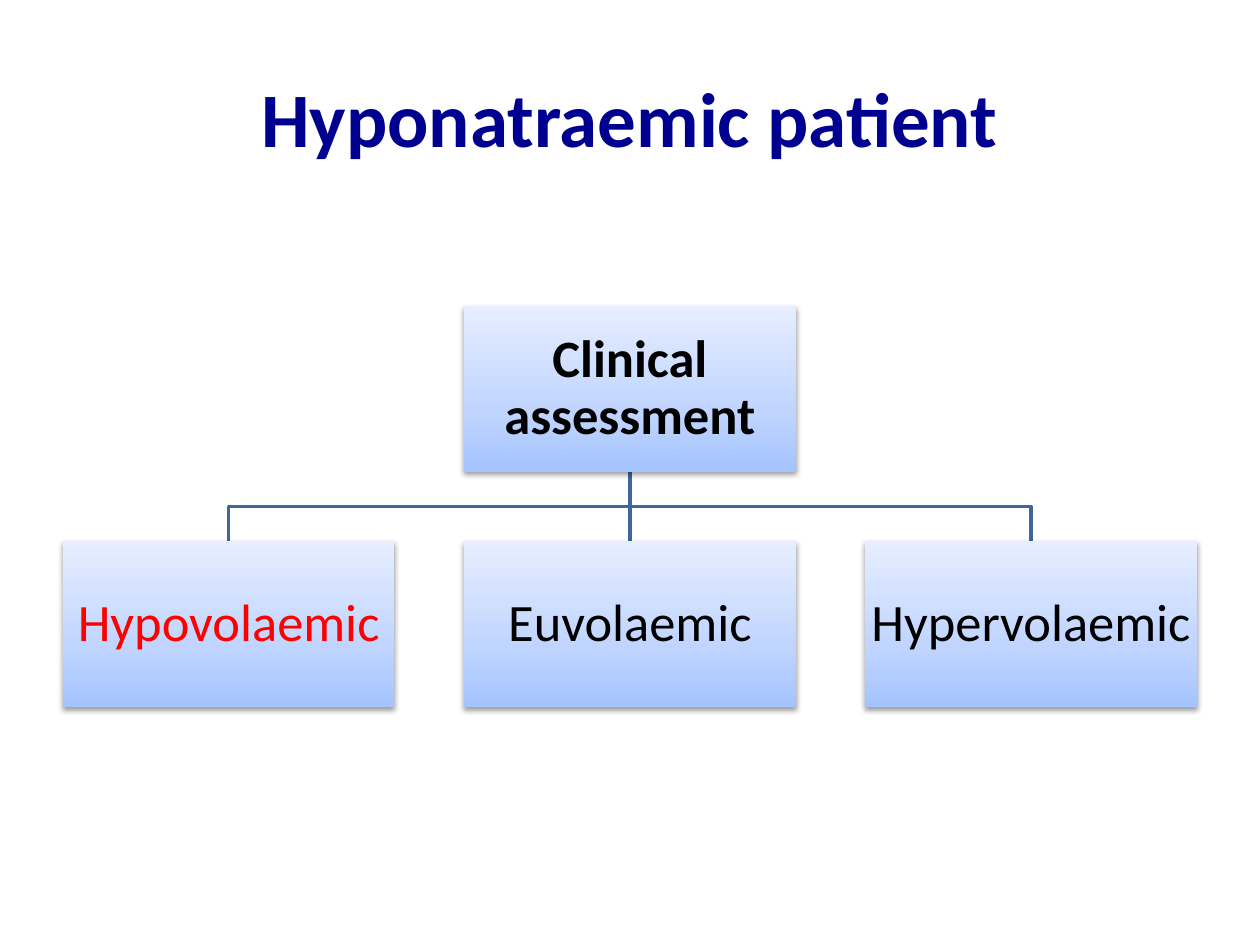
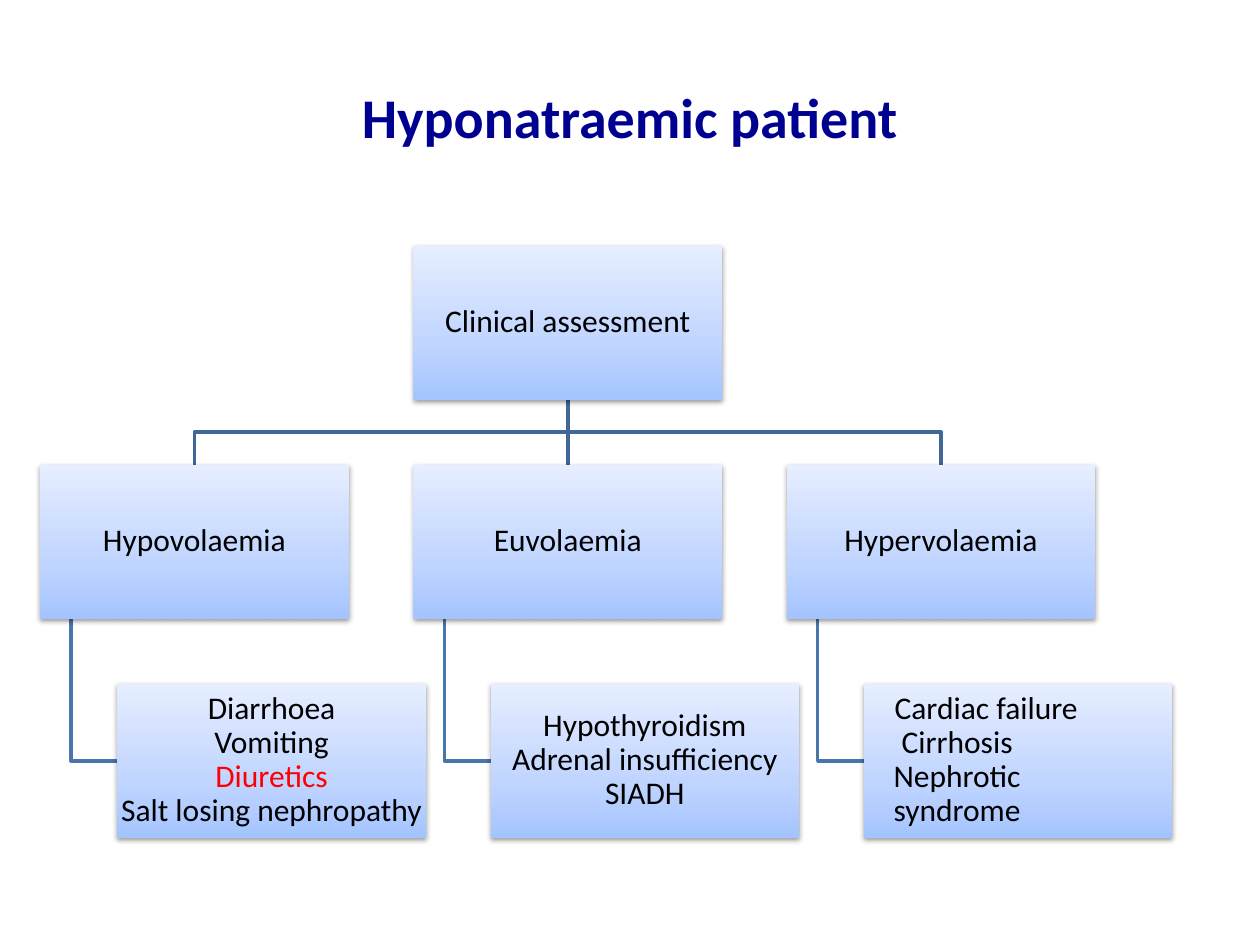
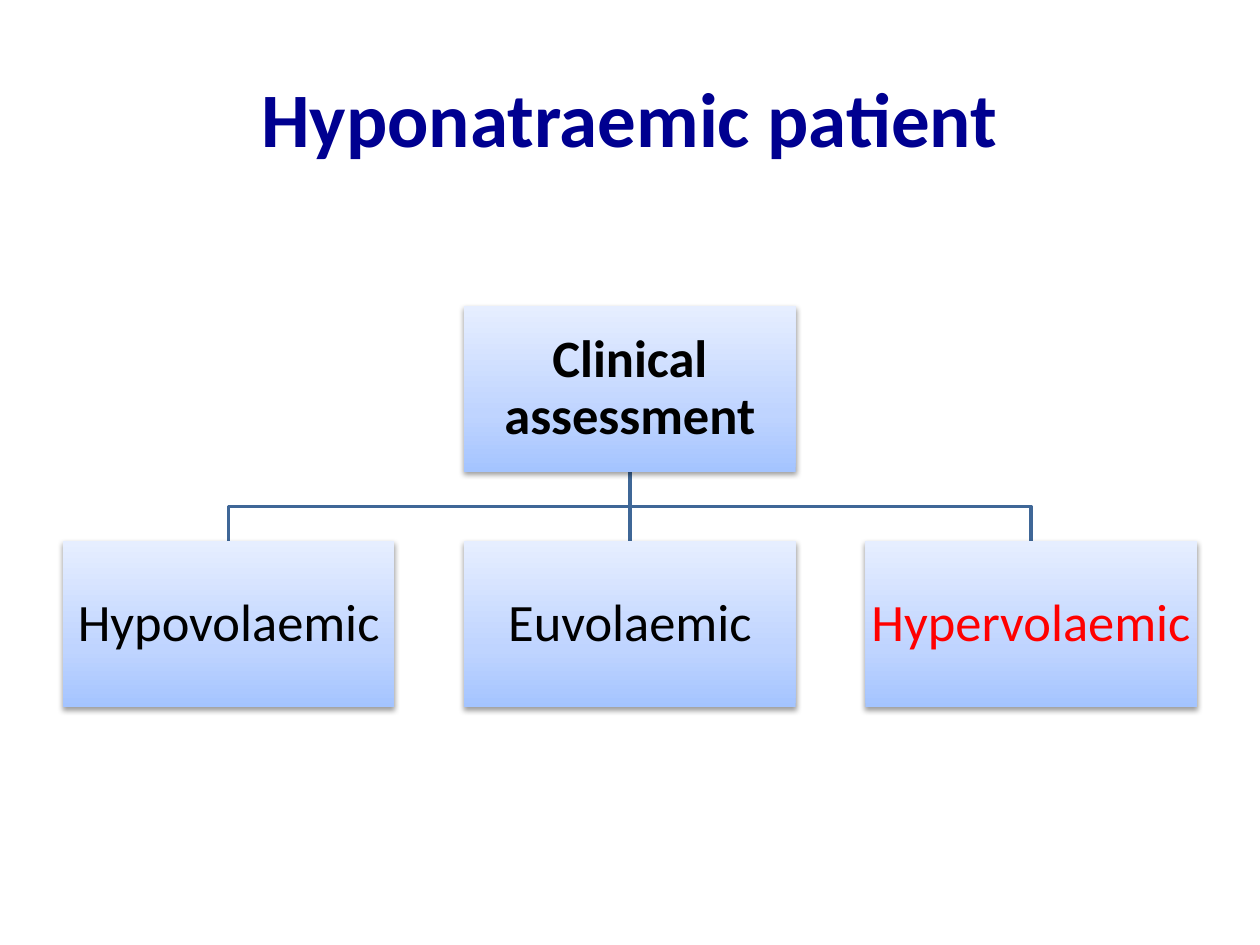
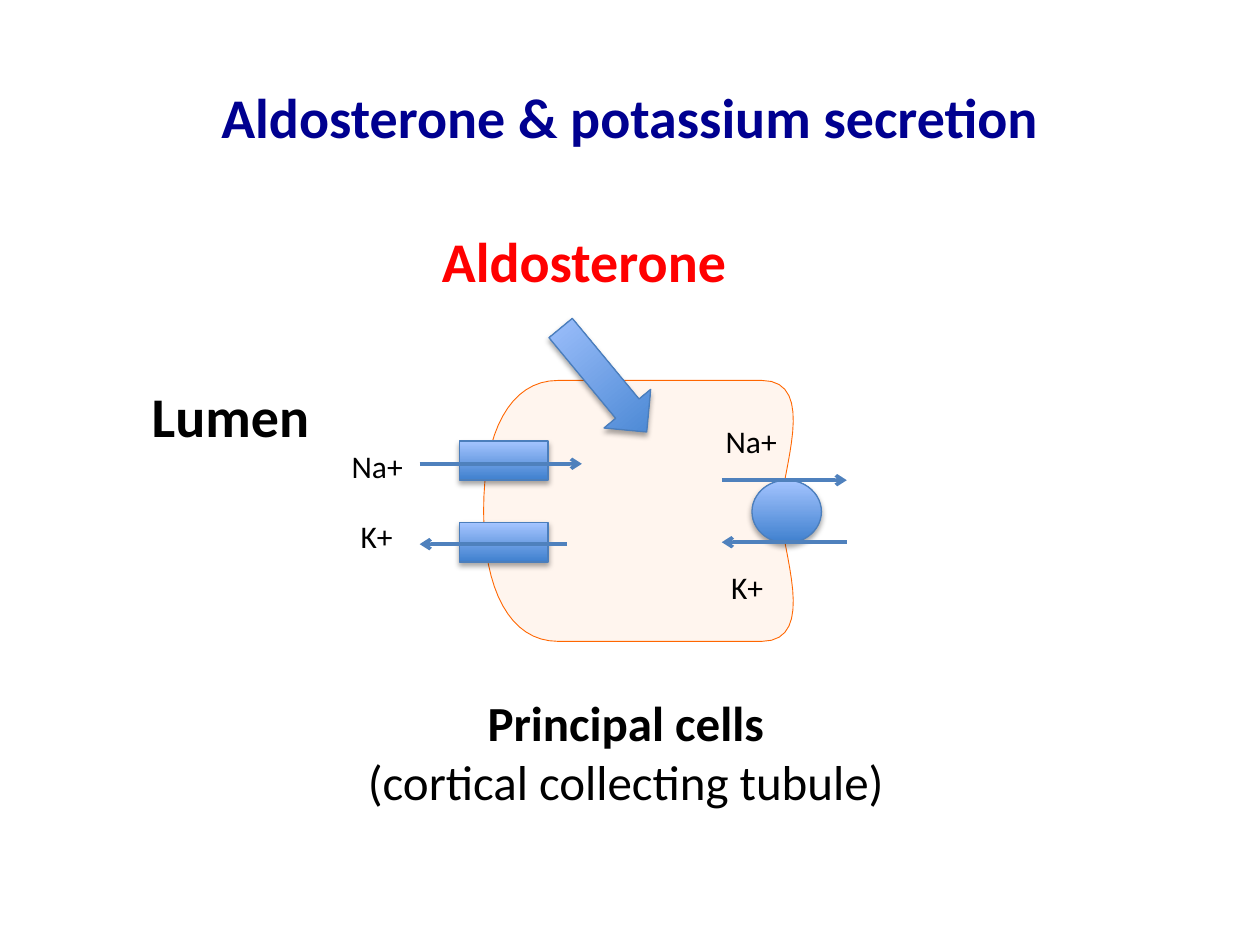
from lxml import etree
from pptx import Presentation
from pptx.dml.color import RGBColor
from pptx.enum.shapes import MSO_CONNECTOR, MSO_SHAPE
from pptx.enum.text import MSO_ANCHOR, PP_ALIGN
from pptx.oxml.ns import qn
from pptx.util import Cm, Pt

RECT, OVAL, DOWN = MSO_SHAPE.RECTANGLE, MSO_SHAPE.OVAL, MSO_SHAPE.DOWN_ARROW
STRAIGHT = MSO_CONNECTOR.STRAIGHT
MIDDLE, TOP = MSO_ANCHOR.MIDDLE, MSO_ANCHOR.TOP
LEFT, CENTER = PP_ALIGN.LEFT, PP_ALIGN.CENTER

FONT = "Calibri"
HEX = {
    "title": "000090", "text": "000000", "alert": "FF0000",
    "link": "3F6797", "stem": "4875AC", "edge": "4B7EBC", "flow": "4F81BD",
    "cell": "FFF5EE", "rim": "FF6600", "shade": "000000",
}
PALE = [(0, "A4C4FF"), (35, "BFD4FF"), (100, "E6EEFF")]
DEEP = [(0, "3F80CE"), (100, "A4C4FF")]


def rgb(name):
    return RGBColor.from_string(HEX[name])


def add(parent, tag, **attrs):
    node = etree.SubElement(parent, qn(tag))
    for key, value in attrs.items():
        node.set(key, str(value))
    return node


# Text
def write(frame, lines, size, bold=False, align=CENTER, anchor=MIDDLE,
          wrap=True, space=None):
    """Each line is a text, or a text with a dict of its own settings."""
    frame.word_wrap = wrap
    frame.vertical_anchor = anchor
    for i, line in enumerate(lines):
        words, own = (line, {}) if isinstance(line, str) else line
        para = frame.paragraphs[0] if i == 0 else frame.add_paragraph()
        para.text = words
        para.alignment = align
        para.line_spacing = space
        if "before" in own:
            para.space_before = Pt(own["before"])
        for side in ("marL", "marR"):
            if side in own:
                para._p.get_or_add_pPr().set(side, str(Cm(own[side])))
        font = para.font
        font.name, font.size = FONT, Pt(size)
        font.bold = own.get("bold", bold)
        font.color.rgb = rgb(own.get("color", "text"))


def label(slide, box, lines, size, pad=None, **style):
    frame = slide.shapes.add_textbox(*map(Cm, box)).text_frame
    if pad is not None:
        frame.margin_left = Cm(pad)
    write(frame, lines, size, **style)


def title(slide, text, size):
    label(slide, (1.27, 0.76, 22.86, 3.18), [(text, {"color": "title"})],
          size, bold=True)


# Shapes and lines
def block(slide, kind, box, stops, alpha, dist, edge=None):
    """Preset shape with an upward gradient and a soft shadow below."""
    shape = slide.shapes.add_shape(kind, *map(Cm, box))
    if edge:
        shape.line.color.rgb = rgb(edge)
        shape.line.width = Pt(0.75)
    else:
        shape.line.fill.background()
    props = shape.element.spPr
    grad = add(props, "a:gradFill", rotWithShape=1)
    ramp = add(grad, "a:gsLst")
    for pos, color in stops:
        add(add(ramp, "a:gs", pos=pos * 1000), "a:srgbClr", val=color)
    add(grad, "a:lin", ang=270 * 60000, scaled=0)
    props.insert(2, grad)
    shadow = add(add(props, "a:effectLst"), "a:outerShdw", blurRad=Pt(3.1),
                 dist=Pt(dist), dir=90 * 60000, rotWithShape=0)
    add(add(shadow, "a:srgbClr", val=HEX["shade"]), "a:alpha",
        val=alpha * 1000)
    return shape


def line(slide, start, end, color, arrow=False):
    link = slide.shapes.add_connector(STRAIGHT, *map(Cm, start + end))
    link.line.color.rgb = rgb(color)
    link.line.width = Pt(2)
    props = link.element.spPr
    if arrow:
        add(props.find(qn("a:ln")), "a:tailEnd", type="arrow")
    add(props, "a:effectLst")


def outline(slide, points, color, width, fill=None):
    spots = [(Cm(x), Cm(y)) for x, y in points]
    form = slide.shapes.build_freeform(*spots[0], scale=1.0)
    form.add_line_segments(spots[1:], close=fill is not None)
    shape = form.convert_to_shape()
    shape.shadow.inherit = False
    shape.line.color.rgb = rgb(color)
    shape.line.width = Pt(width)
    if fill:
        shape.fill.solid()
        shape.fill.fore_color.rgb = rgb(fill)
    else:
        shape.fill.background()


def curve(a, b, c, d, steps=16):
    """Points of a cubic curve after its start a."""
    for i in range(1, steps + 1):
        t = i / steps
        u = 1 - t
        yield tuple(u**3 * p + 3 * u * u * t * q + 3 * u * t * t * r + t**3 * s
                    for p, q, r, s in zip(a, b, c, d))


# Tree of a root, its kids in a row, and a leaf below each kid
def tree(slide, left, top, width, root, kids, size, inset, leaves=()):
    wide = width / 3.42          # three boxes and two gaps of 0.21
    high = wide / 2
    step, drop = 1.21 * wide, 1.42 * high
    middle = left + width / 2
    row, base = top + drop, top + 2 * drop
    lefts = [left + i * step for i in range(len(kids))]

    # Links
    for x in lefts:
        end = x + wide / 2
        if abs(end - middle) < 0.01:
            line(slide, (middle, top + high), (middle, row), "link")
        else:
            bend = (top + high + row) / 2
            outline(slide, [(middle, top + high), (middle, bend),
                            (end, bend), (end, row)], "link", 2)
    for x, _ in zip(lefts, leaves):
        stem, turn = x + 0.1 * wide, base + high / 2
        outline(slide, [(stem, row + high), (stem, turn),
                        (x + 0.25 * wide, turn)], "stem", 2)

    # Boxes
    nodes = [(middle - wide / 2, top, [root])]
    nodes += [(x, row, [kid]) for x, kid in zip(lefts, kids)]
    nodes += [(x + 0.25 * wide, base, leaf) for x, leaf in zip(lefts, leaves)]
    for x, y, lines in nodes:
        shape = block(slide, RECT, (x, y, wide, high), PALE, 38, 1.6)
        frame = shape.text_frame
        frame.margin_left = frame.margin_right = Cm(inset)
        frame.margin_top = frame.margin_bottom = Cm(inset)
        write(frame, lines, size, space=0.9)


def assess(slide, kids):
    title(slide, "Hyponatraemic patient", 44)
    tree(slide, 1.27, 6.17, 22.86, ("Clinical assessment", {"bold": True}),
         kids, 30, 0.05)


def causes(slide):
    title(slide, "Hyponatraemic patient", 32)
    leaves = [
        ["Diarrhoea", "Vomiting", ("Diuretics", {"color": "alert"}),
         "Salt losing nephropathy"],
        ["Hypothyroidism", "Adrenal insufficiency", "SIADH"],
        [("Cardiac failure", {"marR": 1.29}), ("Cirrhosis", {"marR": 2.46}),
         "Nephrotic syndrome"],
    ]
    tree(slide, 0.81, 4.95, 21.27, "Clinical assessment",
         ["Hypovolaemia", "Euvolaemia", "Hypervolaemia"], 18, 0.03, leaves)


# Cell with its channels, pump and ion flows
def cell(slide, left, top):
    def at(x, y):
        return left + x, top + y

    def deep(kind, x, y, *size):
        return block(slide, kind, at(x, y) + size, DEEP, 35, 1.8, "edge")

    # Membrane
    high = 5.26
    half = high / 2
    path = [(5.61, 0)]
    for knots in [((6.76, 0), (5.99, 1.88), (5.99, half)),
                  ((5.99, 3.38), (6.76, high), (5.61, high))]:
        path += curve(path[-1], *knots)
    path.append((1.5, high))
    for knots in [((0.53, high), (0, 4.22), (0, half)),
                  ((0, 1.04), (0.53, 0), (1.5, 0))]:
        path += curve(path[-1], *knots)
    outline(slide, [at(*p) for p in path], "rim", 0.5, "cell")

    # Pump and channels
    deep(OVAL, 5.41, 2.01, 1.4, 1.27)
    for y in (1.22, 2.87):
        deep(RECT, -0.48, y, 1.78, 0.79)

    # Flows
    for start, end, y in [(4.8, 7.32, 2.01), (7.32, 4.8, 3.26),
                          (-1.29, 1.98, 1.68), (1.68, -1.29, 3.3)]:
        line(slide, at(start, y), at(end, y), "flow", arrow=True)

    # Ions
    for ion, x, y, wide, pad in [("Na+", -3.48, 1.22, 2.18, 0.82),
                                 ("K+", -3.43, 2.62, 1.88, 0.95),
                                 ("Na+", 4.47, 0.71, 1.88, 0.41),
                                 ("K+", 4.17, 3.66, 1.88, 0.82)]:
        label(slide, at(x, y) + (wide, 1.02), [ion], 18, pad,
              align=LEFT, anchor=TOP)

    # Hormone arrow
    deep(DOWN, 1.81, -1.37, 1.22, 2.72).rotation = 320.4


def hormone(slide):
    title(slide, "Aldosterone & potassium secretion", 32)
    label(slide, (1.27, 4.45, 22.86, 12.57),
          [("Aldosterone", {"color": "alert", "marL": 7.39}),
           ("Lumen", {"marL": 1.54, "before": 50})],
          32, bold=True, align=LEFT, anchor=TOP)
    cell(slide, 9.75, 7.67)
    label(slide, (7.09, 13.84, 11.05, 2.64),
          [("Principal cells", {"bold": True}), "(cortical collecting tubule)"],
          28, anchor=TOP, wrap=False)


def main():
    deck = Presentation()
    deck.slide_width, deck.slide_height = Cm(25.4), Cm(19.05)
    blank = deck.slide_layouts[6]

    def page():
        return deck.slides.add_slide(blank)

    red = {"color": "alert"}
    assess(page(), [("Hypovolaemic", red), "Euvolaemic", "Hypervolaemic"])
    causes(page())
    assess(page(), ["Hypovolaemic", "Euvolaemic", ("Hypervolaemic", red)])
    hormone(page())
    deck.save("out.pptx")


if __name__ == "__main__":
    main()
